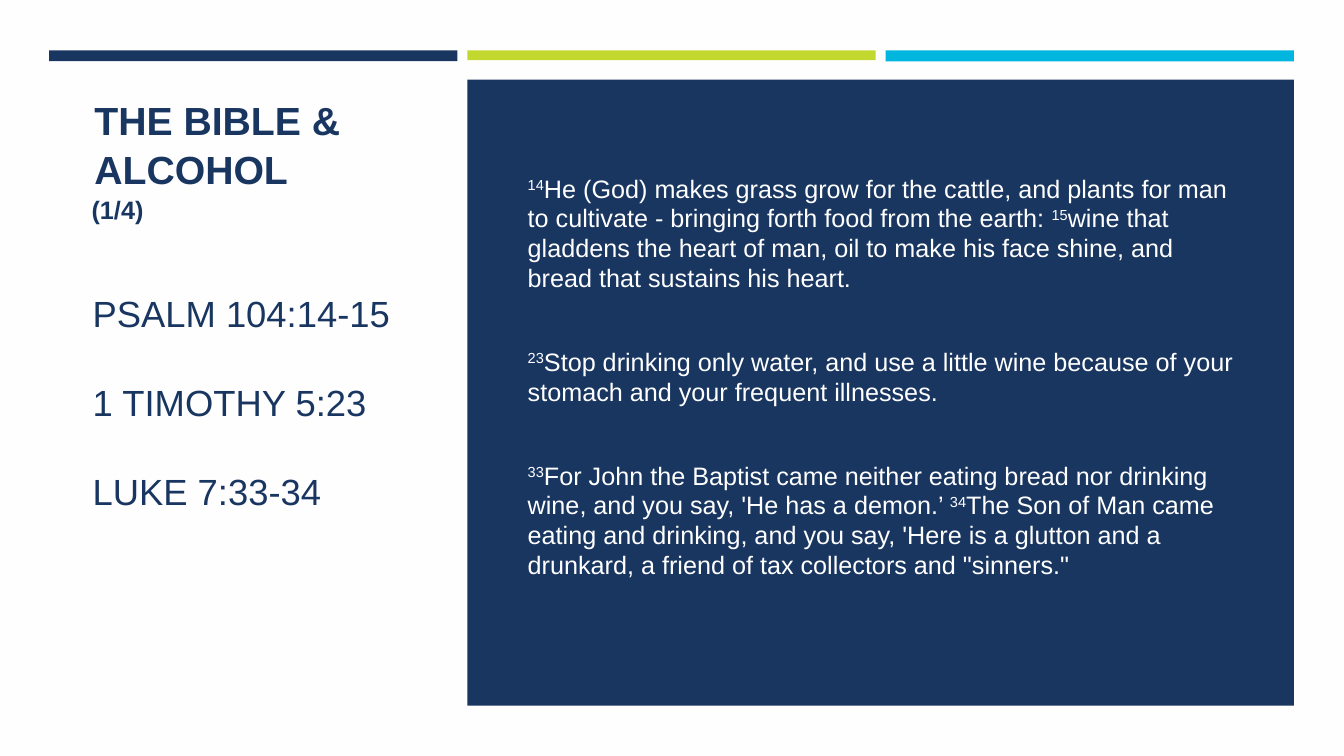
from pptx import Presentation
from pptx.dml.color import RGBColor
from pptx.enum.shapes import MSO_SHAPE as Preset
from pptx.enum.text import MSO_ANCHOR as Anchor, MSO_AUTO_SIZE as AutoSize, PP_ALIGN as Align
from pptx.util import Cm, Pt

COLOURS = {"paper": "FFFEFF", "navy": "193661", "lime": "C3D82E", "cyan": "00B6DE", "white": "FFFFFF"}
FONT = "Arial"
BAR_WIDTH, BAR_STEP = 10.29, 10.54
REFERENCES = ["PSALM 104:14-15", "1 TIMOTHY 5:23", "LUKE 7:33-34"]
PASSAGES = [
    [("14", "He (God) makes grass grow for the cattle, and plants for man to cultivate - "
            "bringing forth food from the earth: "),
     ("15", "wine that gladdens the heart of man, oil to make his face shine, and bread "
            "that sustains his heart.")],
    [("23", "Stop drinking only water, and use a little wine because of your stomach and "
            "your frequent illnesses.")],
    [("33", "For John the Baptist came neither eating bread nor drinking wine, and you say, "
            "'He has a demon.’ "),
     ("34", "The Son of Man came eating and drinking, and you say, 'Here is a glutton and a "
            "drunkard, a friend of tax collectors and \"sinners.\"")],
]


def colour(name):
    """Return the named colour."""
    return RGBColor.from_string(COLOURS[name])


def add_block(slide, left, top, width, height, fill):
    """Add a plain filled rectangle."""
    shape = slide.shapes.add_shape(Preset.RECTANGLE, Cm(left), Cm(top), Cm(width), Cm(height))
    shape.shadow.inherit = False
    shape.fill.solid()
    shape.fill.fore_color.rgb = colour(fill)
    shape.line.fill.background()


def add_run(paragraph, text, size, fill="navy", bold=False, superscript=False):
    """Append one formatted run."""
    run = paragraph.add_run()
    run.text = text
    font = run.font
    font.name, font.size, font.bold = FONT, Pt(size), bold
    font.color.rgb = colour(fill)
    if superscript:
        run._r.get_or_add_rPr().set("baseline", "30000")


def prepare_frame(shape):
    """Make a text shape wrap, keep its size and centre vertically."""
    frame = shape.text_frame
    frame.word_wrap = True
    frame.auto_size = AutoSize.NONE
    frame.vertical_anchor = Anchor.MIDDLE
    return frame


def add_paragraphs(frame, count, gap, line_spacing):
    """Return left-aligned paragraphs separated by an equal gap."""
    for index in range(count):
        paragraph = frame.paragraphs[0] if index == 0 else frame.add_paragraph()
        paragraph.alignment = Align.LEFT
        paragraph.line_spacing = line_spacing
        paragraph.space_before = Pt(gap if index else 0)
        paragraph.space_after = Pt(0)
        yield paragraph


def add_label(slide, left, top, width, height, text, size):
    """Add a bold one-paragraph label."""
    box = slide.shapes.add_textbox(Cm(left), Cm(top), Cm(width), Cm(height))
    for paragraph in add_paragraphs(prepare_frame(box), 1, 0, 1.04):
        add_run(paragraph, text, size, bold=True)


def add_bars(slide, left, top):
    """Draw the row of three accent bars."""
    for index, (fill, height) in enumerate([("navy", 0.27), ("lime", 0.25), ("cyan", 0.28)]):
        add_block(slide, left + index * BAR_STEP, top, BAR_WIDTH, height, fill)


def add_topic(slide, left, top, width, height):
    """Fill the left column with heading, part number and references."""
    title = slide.shapes.title
    title.left, title.top, title.width, title.height = Cm(left), Cm(top), Cm(width), Cm(height)
    frame = prepare_frame(title)
    frame.margin_top, frame.margin_bottom = Cm(1.36), Cm(0.13)
    for paragraph, reference in zip(add_paragraphs(frame, len(REFERENCES), 32.3, 1), REFERENCES):
        add_run(paragraph, reference, 26)
    add_label(slide, left + 0.05, top - 0.76, width, 2.79, "THE BIBLE & ALCOHOL", 28)
    add_label(slide, left - 0.02, top + 0.89, width + 1.73, 2.79, "(1/4)", 18)


def add_passages(slide, left, top, width, height):
    """Draw the navy panel with the quoted verses."""
    add_block(slide, left, top, width, height, "navy")
    box = slide.shapes.add_textbox(Cm(left + 1.27), Cm(top + 0.96), Cm(width - 2.49), Cm(height - 2.69))
    paragraphs = add_paragraphs(prepare_frame(box), len(PASSAGES), 39, 0.98)
    for paragraph, verses in zip(paragraphs, PASSAGES):
        for number, text in verses:
            add_run(paragraph, number, 18, "white", superscript=True)
            add_run(paragraph, text, 18, "white")


def main():
    """Build and save the slide."""
    presentation = Presentation()
    presentation.slide_width, presentation.slide_height = Cm(33.87), Cm(19.05)
    slide = presentation.slides.add_slide(presentation.slide_layouts[5])
    slide.background.fill.solid()
    slide.background.fill.fore_color.rgb = colour("paper")
    left = 1.24
    add_bars(slide, left, 1.27)
    add_topic(slide, 2.08, 2.97, 8.48, 13.08)
    add_passages(slide, left + BAR_STEP, 2.01, BAR_STEP + BAR_WIDTH, 15.77)
    presentation.save("out.pptx")


if __name__ == "__main__":
    main()
